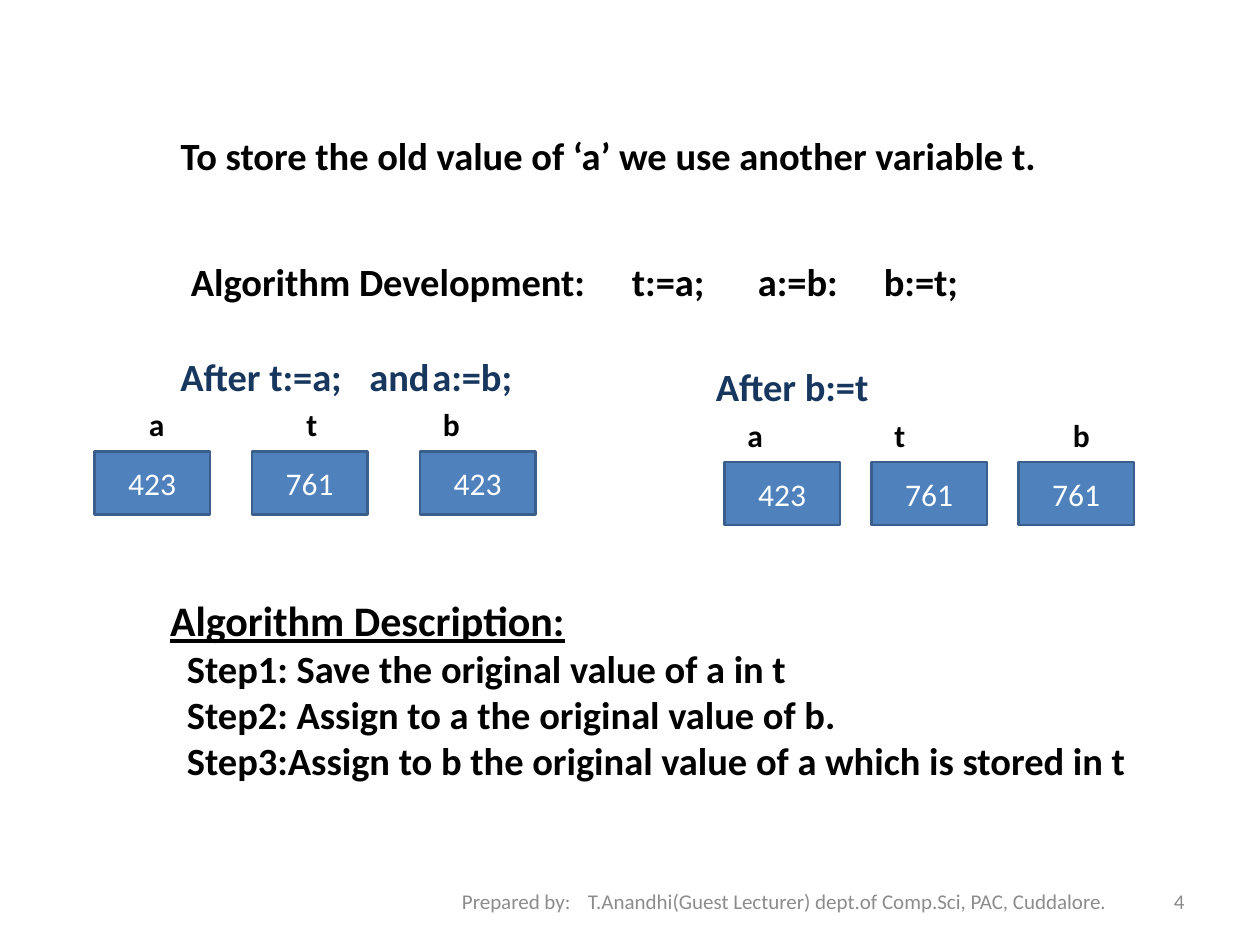
from dataclasses import dataclass

from pptx import Presentation
from pptx.dml.color import RGBColor
from pptx.enum.shapes import MSO_SHAPE
from pptx.enum.text import MSO_ANCHOR, MSO_AUTO_SIZE, PP_ALIGN
from pptx.oxml.ns import qn
from pptx.util import Inches, Pt
from lxml.etree import SubElement

SCALE = Inches(1) // 120


@dataclass(frozen=True)
class Theme:
    font: str = "Calibri"
    ink: str = "000000"
    accent: str = "17375E"
    muted: str = "8C8C8C"
    light: str = "FFFFFF"
    fill: str = "4F81BD"
    outline: str = "3A5F8C"
    heading: int = 24
    text: int = 22
    label: int = 18
    small: int = 12


def px(*lengths):
    return [length * SCALE for length in lengths]


def set_all(target, values):
    for name, value in values.items():
        setattr(target, name, value)


class SlideBuilder:
    def __init__(self, presentation, theme):
        self.theme = theme
        self.slide = presentation.slides.add_slide(presentation.slide_layouts[1])

    def place(self, shape, box):
        set_all(shape, dict(zip(("left", "top", "width", "height"), px(*box))))

    def frame(self, shape, anchor=MSO_ANCHOR.TOP, inset=12):
        margin, edge = px(inset, 6)
        set_all(shape.text_frame, {
            "word_wrap": True, "auto_size": MSO_AUTO_SIZE.NONE,
            "vertical_anchor": anchor, "margin_left": margin,
            "margin_top": edge, "margin_bottom": edge})
        return shape.text_frame

    def fill_paragraph(self, paragraph, text, size, color, bold=True, underline=False,
                       align=PP_ALIGN.LEFT, indent=0, tabs=()):
        run = paragraph.add_run()
        run.text = text
        set_all(run.font, {"name": self.theme.font, "size": Pt(size),
                           "bold": bold, "underline": underline})
        run.font.color.rgb = RGBColor.from_string(color)
        set_all(paragraph, {"alignment": align, "space_before": Pt(0)})
        properties = paragraph._p.get_or_add_pPr()
        properties.set("marL", str(indent * SCALE))
        properties.set("indent", "0")
        SubElement(properties, qn("a:buNone"))
        if tabs:
            stops = SubElement(properties, qn("a:tabLst"))
            for position in tabs:
                SubElement(stops, qn("a:tab"), pos=str(position * SCALE), algn="l")

    def title(self, text, box):
        shape = self.slide.shapes.title
        self.place(shape, box)
        self.fill_paragraph(self.frame(shape).paragraphs[0], text,
                            self.theme.text, self.theme.ink)

    def steps(self, heading, lines, box):
        shape = self.slide.placeholders[1]
        self.place(shape, box)
        frame = self.frame(shape)
        self.fill_paragraph(frame.paragraphs[0], heading, self.theme.heading,
                            self.theme.ink, underline=True)
        for line in lines:
            self.fill_paragraph(frame.add_paragraph(), line, self.theme.text,
                                self.theme.ink, indent=16)

    def text(self, text, box, size, color, anchor=MSO_ANCHOR.TOP, inset=12, **style):
        shape = self.slide.shapes.add_textbox(*px(*box))
        frame = self.frame(shape, anchor, inset)
        self.fill_paragraph(frame.paragraphs[0], text, size, color, **style)

    def cell(self, value, left, top):
        shape = self.slide.shapes.add_shape(MSO_SHAPE.RECTANGLE, *px(left, top, 110, 60))
        shape.shadow.inherit = False
        shape.fill.solid()
        shape.fill.fore_color.rgb = RGBColor.from_string(self.theme.fill)
        shape.line.color.rgb = RGBColor.from_string(self.theme.outline)
        shape.line.width = Pt(1.5)
        frame = self.frame(shape, MSO_ANCHOR.MIDDLE)
        self.fill_paragraph(frame.paragraphs[0], value, self.theme.label,
                            self.theme.light, bold=False, align=PP_ALIGN.CENTER)

    def variables(self, top, columns):
        for name, value, left, label_left in columns:
            self.cell(value, left, top)
            self.text(name, (label_left, top - 50, 60, 48),
                      self.theme.label, self.theme.ink)

    def footer(self, text, box, **style):
        self.text(text, box, self.theme.small, self.theme.muted,
                  MSO_ANCHOR.MIDDLE, bold=False, **style)


def main():
    presentation = Presentation()
    set_all(presentation, dict(zip(("slide_width", "slide_height"), px(1200, 900))))
    theme = Theme()
    builder = SlideBuilder(presentation, theme)

    builder.title("To store the old value of ‘a’ we use another variable t.",
                  (160, 120, 970, 56))
    builder.text("Algorithm Development:\tt:=a;\ta:=b:\tb:=t;", (170, 240, 930, 100),
                 theme.text, theme.ink, tabs=(432, 544, 661))
    builder.text("After t:=a;\tand\ta:=b;", (160, 330, 420, 56),
                 theme.text, theme.accent, tabs=(179, 260))
    builder.variables(430, [("a", "423", 90, 130), ("t", "761", 240, 280),
                            ("b", "423", 400, 410)])
    builder.text("After b:=t", (670, 340, 400, 56), theme.text, theme.accent)
    builder.variables(440, [("a", "423", 690, 700), ("t", "761", 830, 840),
                            ("b", "761", 970, 1010)])
    builder.steps("Algorithm Description:", [
        "Step1: Save the original value of a in t",
        "Step2: Assign to a the original value of b.",
        "Step3:Assign to b the original value of a which is stored in t",
    ], (150, 560, 960, 239))
    builder.footer("Prepared by:\tT.Anandhi(Guest Lecturer) dept.of Comp.Sci, PAC, Cuddalore.",
                   (410, 834, 690, 48), inset=30, tabs=(135,))
    builder.footer("4", (860, 834, 280, 48), align=PP_ALIGN.RIGHT)

    presentation.save("out.pptx")


if __name__ == "__main__":
    main()
